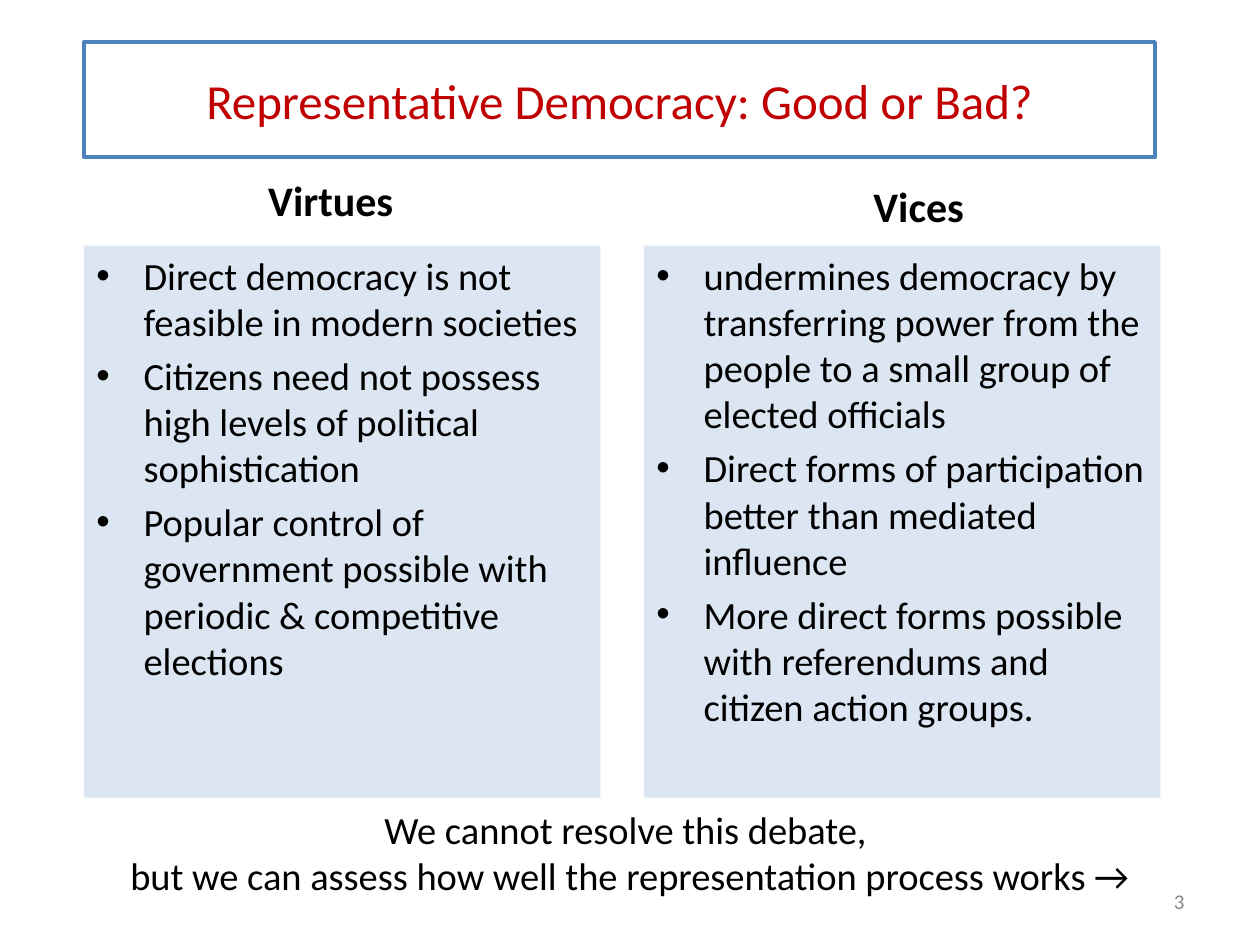
from lxml import etree
from pptx import Presentation
from pptx.dml.color import RGBColor
from pptx.enum.shapes import MSO_SHAPE
from pptx.enum.text import MSO_ANCHOR, PP_ALIGN
from pptx.oxml.ns import qn
from pptx.util import Pt

RECT = MSO_SHAPE.RECTANGLE
TOP, MIDDLE, BOTTOM = MSO_ANCHOR.TOP, MSO_ANCHOR.MIDDLE, MSO_ANCHOR.BOTTOM
LEFT, CENTER, RIGHT = PP_ALIGN.LEFT, PP_ALIGN.CENTER, PP_ALIGN.RIGHT

COLORS = {"text": "000000", "title": "C00000", "border": "4F81BD",
          "panel": "DCE6F2", "number": "898989"}
FONT = "Calibri"
INDENT = 27
PANEL_TOP, PANEL_W, PANEL_H = 140.4, 295.2, 315.4

COLUMNS = [
    ("Virtues", (36, 98, 306, 34), 48, [
        "Direct democracy is not feasible in modern societies",
        "Citizens need not possess high levels of political sophistication",
        "Popular control of government possible with periodic & competitive elections",
    ]),
    ("Vices", (366, 101.5, 318, 34), 368, [
        "undermines democracy by transferring power from the people "
        "to a small group of elected officials",
        "Direct forms of participation better than mediated influence",
        "More direct forms possible with referendums and citizen action groups.",
    ]),
]
CLOSING = ["We cannot resolve this debate, ",
           "but we can assess how well the representation process works →"]


class Deck:
    """Holds the style and the current slide, and draws each kind of element."""

    def __init__(self):
        self.prs = Presentation()
        self.prs.slide_width, self.prs.slide_height = Pt(720), Pt(540)
        self.s = self.prs.slides.add_slide(self.prs.slide_layouts[5])

    def color(self, name):
        return RGBColor.from_string(COLORS[name])

    def fill_text(self, sp, lines, size, color="text", bold=False, align=LEFT,
                  anchor=TOP, bullets=False, gap=0):
        tf = sp.text_frame
        frame = {"word_wrap": True, "vertical_anchor": anchor,
                 "margin_left": Pt(7.2), "margin_right": Pt(7.2),
                 "margin_top": Pt(3.6), "margin_bottom": Pt(3.6)}
        for name, value in frame.items():
            setattr(tf, name, value)
        for i, line in enumerate(lines):
            p = tf.add_paragraph() if i else tf.paragraphs[0]
            p.alignment = align
            p.space_before = Pt(gap if i else 0)
            if bullets:
                self.bullet(p)
            r = p.add_run()
            r.text = line
            for name, value in {"name": FONT, "size": Pt(size), "bold": bold}.items():
                setattr(r.font, name, value)
            r.font.color.rgb = self.color(color)

    def bullet(self, p):
        pPr = p._p.get_or_add_pPr()
        pPr.set("marL", str(Pt(INDENT)))
        pPr.set("indent", str(-Pt(INDENT)))
        etree.SubElement(pPr, qn("a:buFont")).set("typeface", "Arial")
        etree.SubElement(pPr, qn("a:buChar")).set("char", "•")

    def title(self, box, text):
        sp = self.s.shapes.title
        sp.left, sp.top, sp.width, sp.height = map(Pt, box)
        sp.line.color.rgb = self.color("border")
        sp.line.width = Pt(2.25)
        self.fill_text(sp, [text], 28, "title", align=CENTER, anchor=MIDDLE)

    def text(self, box, lines, size, **style):
        sp = self.s.shapes.add_textbox(*map(Pt, box))
        self.fill_text(sp, lines, size, **style)

    def panel(self, box, lines):
        sp = self.s.shapes.add_shape(RECT, *map(Pt, box))
        sp.shadow.inherit = False
        sp.fill.solid()
        sp.fill.fore_color.rgb = self.color("panel")
        sp.line.fill.background()
        self.fill_text(sp, lines, 22, bullets=True, gap=4.4)


def main():
    deck = Deck()
    deck.title((48, 24, 612, 66), "Representative Democracy: Good or Bad?")
    for heading, box, left, points in COLUMNS:
        deck.text(box, [heading], 24, bold=True, align=CENTER, anchor=BOTTOM)
        deck.panel((left, PANEL_TOP, PANEL_W, PANEL_H), points)
    deck.text((61.2, 457.2, 597.6, 60.5), CLOSING, 22, align=CENTER)
    deck.text((516, 500.5, 168, 28.8), ["3"], 12, color="number",
              align=RIGHT, anchor=MIDDLE)
    deck.prs.save("out.pptx")


if __name__ == "__main__":
    main()
